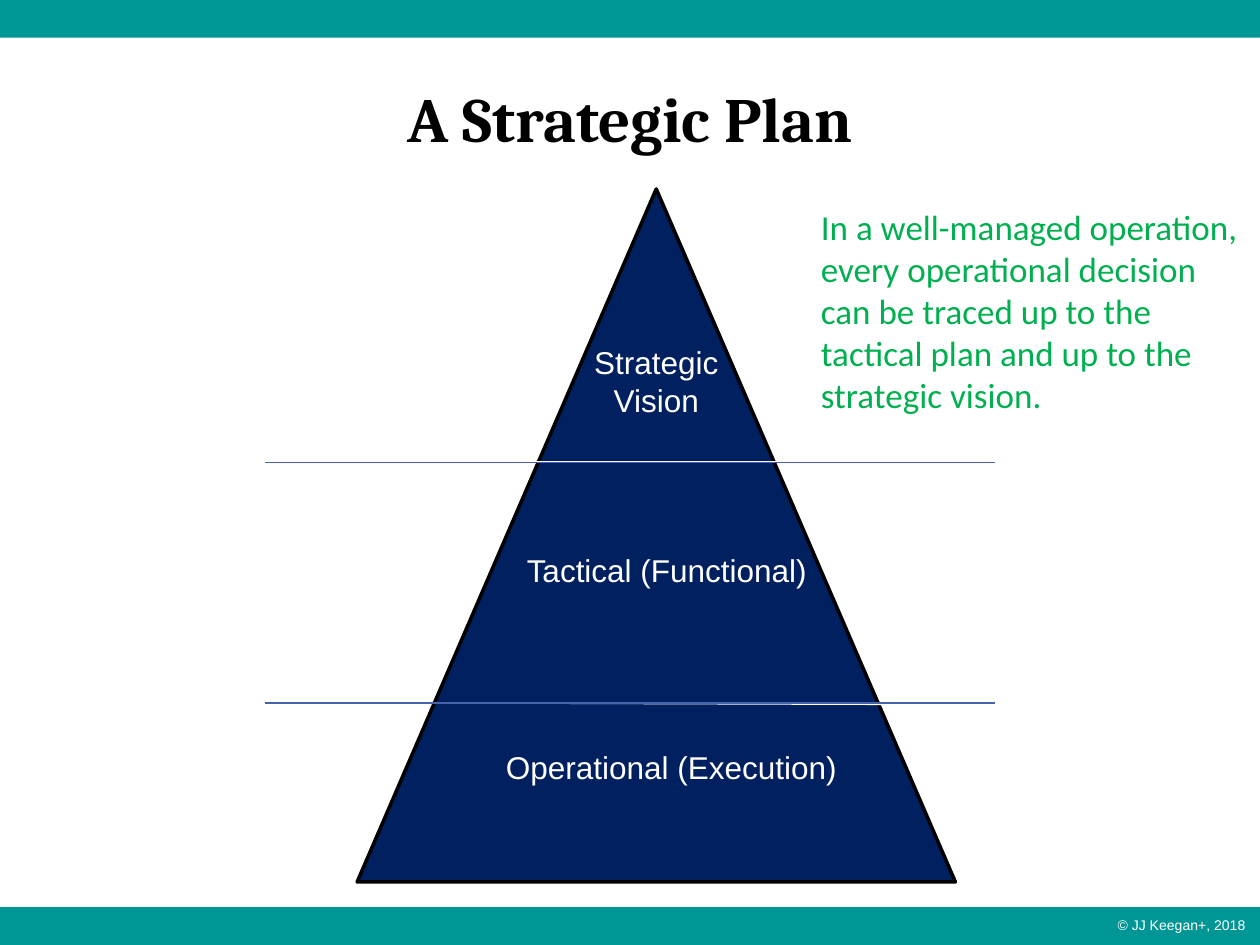
from lxml import etree
from pptx import Presentation
from pptx.dml.color import RGBColor
from pptx.enum.shapes import MSO_CONNECTOR, MSO_SHAPE
from pptx.enum.text import MSO_ANCHOR, PP_ALIGN
from pptx.oxml.ns import qn
from pptx.util import Cm, Pt

RECTANGLE = MSO_SHAPE.RECTANGLE
TRIANGLE = MSO_SHAPE.ISOSCELES_TRIANGLE
STRAIGHT = MSO_CONNECTOR.STRAIGHT
LEFT, CENTER = PP_ALIGN.LEFT, PP_ALIGN.CENTER
TOP, MIDDLE = MSO_ANCHOR.TOP, MSO_ANCHOR.MIDDLE

WIDTH, HEIGHT, BAR = 25.4, 19.05, 0.76
TEAL, NAVY, BLUE, GREEN = "009696", "002060", "4663AB", "00B050"
WHITE, BLACK = "FFFFFF", "000000"


def color(value):
    return RGBColor.from_string(value)


class SlideBuilder:
    """Draws styled elements on one slide, with lengths in centimetres."""

    font = "Arial"
    size = 18
    line_width = 0.75

    def __init__(self, slide):
        self.slide = slide

    def shape(self, kind, left, top, width, height, fill, outline=None):
        shape = self.slide.shapes.add_shape(
            kind, Cm(left), Cm(top), Cm(width), Cm(height))
        shape.shadow.inherit = False
        shape.fill.solid()
        shape.fill.fore_color.rgb = color(fill)
        if outline:
            shape.line.color.rgb = color(outline)
            shape.line.width = Pt(2)
        else:
            shape.line.fill.background()

    def line(self, x1, y1, x2, y2, stroke):
        connector = self.slide.shapes.add_connector(
            STRAIGHT, Cm(x1), Cm(y1), Cm(x2), Cm(y2))
        connector.line.color.rgb = color(stroke)
        connector.line.width = Pt(self.line_width)
        properties = connector._element.find(qn("p:spPr"))
        etree.SubElement(properties, qn("a:effectLst"))

    def text(self, text, left, top, width, height, fill=WHITE, align=LEFT,
             anchor=TOP, font=None, size=None, bold=False, wrap=True):
        box = self.slide.shapes.add_textbox(
            Cm(left), Cm(top), Cm(width), Cm(height))
        frame = box.text_frame
        frame.word_wrap = wrap
        frame.vertical_anchor = anchor
        frame.text = text
        for paragraph in frame.paragraphs:
            paragraph.alignment = align
            for run in paragraph.runs:
                run.font.name = font or self.font
                run.font.size = Pt(size or self.size)
                run.font.bold = bold
                run.font.color.rgb = color(fill)


def main():
    presentation = Presentation()
    presentation.slide_width = Cm(WIDTH)
    presentation.slide_height = Cm(HEIGHT)
    slide = presentation.slides.add_slide(presentation.slide_layouts[6])
    builder = SlideBuilder(slide)

    for top in (HEIGHT - BAR, 0):
        builder.shape(RECTANGLE, 0, top, WIDTH, BAR, TEAL)
    builder.text("© JJ Keegan+, 2018", 22.28, 18.36, 3.12, 0.61,
                 size=8, wrap=False)
    builder.text("A Strategic Plan", 0, 1.47, WIDTH, 2.11, BLACK, CENTER,
                 font="Cambria", size=36, bold=True)

    builder.shape(TRIANGLE, 7.2, 3.81, 12.06, 13.97, NAVY, BLACK)
    builder.line(10.8, 9.31, 15.66, 9.31, WHITE)
    builder.line(8.89, 14.17, 17.78, 14.2, WHITE)

    builder.text("Strategic\nVision", 11.43, 6.78, 3.6, 1.8,
                 align=CENTER, anchor=MIDDLE)
    builder.text("Tactical (Functional)", 10.37, 10.98, 10.8, 1.02,
                 anchor=MIDDLE)
    builder.text("Operational (Execution)", 9.95, 14.95, 9.73, 1.02,
                 anchor=MIDDLE)

    for level in (9.32, 14.17):
        builder.line(5.34, level, 20.06, level, BLUE)
    builder.text("In a well-managed operation, every operational decision "
                 "can be traced up to the tactical plan and up to the "
                 "strategic vision.",
                 16.3, 4.02, 9.1, 4.52, GREEN, font="Calibri", size=20)

    presentation.save("out.pptx")


if __name__ == "__main__":
    main()
